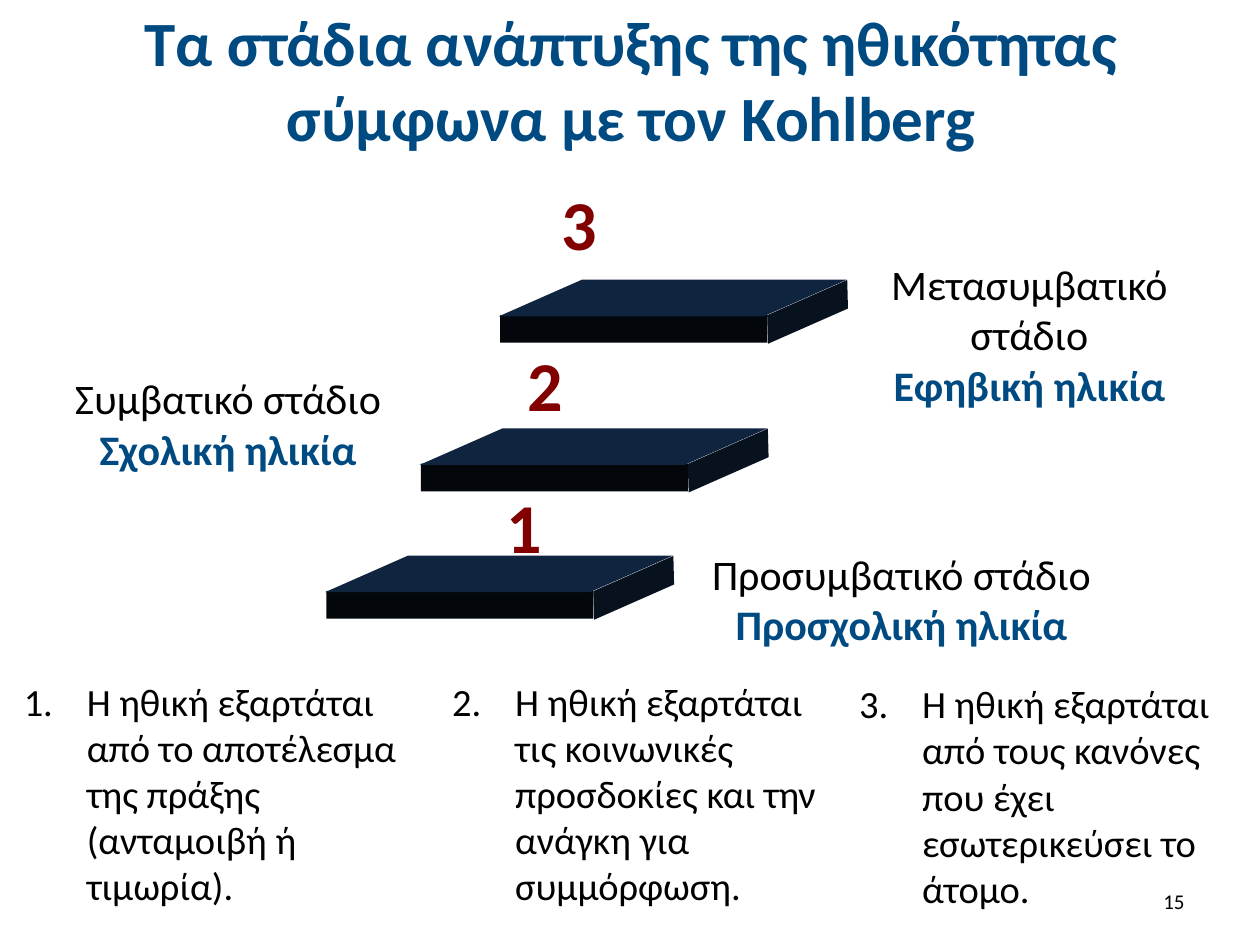
from dataclasses import dataclass

from lxml.etree import SubElement
from pptx import Presentation
from pptx.dml.color import RGBColor
from pptx.enum.shapes import MSO_SHAPE
from pptx.enum.text import MSO_ANCHOR, MSO_AUTO_SIZE, PP_ALIGN
from pptx.oxml.ns import qn
from pptx.util import Inches, Pt


@dataclass(frozen=True)
class Theme:
    font: str = "Calibri"
    text: str = "000000"
    accent: str = "004A82"
    number: str = "820000"
    slab_front: str = "03070C"
    slab_top: str = "0F243E"
    slab_side: str = "08121F"
    title_size: int = 36
    number_size: int = 40
    stage_size: int = 24
    body_size: int = 22
    footer_size: int = 12


THEME = Theme()

# Slab faces: preset, offset from the slab corner, size, rotation, adjustment, colour
SLAB_FACES = [
    (MSO_SHAPE.RECTANGLE, (0.01, 0.28), (2.12, 0.22), 0, None, THEME.slab_front),
    (MSO_SHAPE.PARALLELOGRAM, (0, 0), (2.76, 0.29), 0, 2.27, THEME.slab_top),
    (MSO_SHAPE.PARALLELOGRAM, (2.06, 0.15), (0.78, 0.21), -23.8, 0.41, THEME.slab_side),
]

# Stages from the lowest step up; boxes are left, top, width, height
STAGES = [
    {
        "slab": (2.58, 4.41), "number": (3.92, 3.79),
        "name": "Προσυμβατικό στάδιο", "age": "Προσχολική ηλικία",
        "label": (5.44, 4.3, 3.43, 0.91),
        "rule": "Η ηθική εξαρτάται από το αποτέλεσμα της πράξης (ανταμοιβή ή τιμωρία).",
        "rule_box": (0.09, 5.33, 3.28, 1.95),
    },
    {
        "slab": (3.33, 3.4), "number": (4.09, 2.66),
        "name": "Συμβατικό στάδιο", "age": "Σχολική ηλικία",
        "label": (0.33, 2.91, 2.96, 0.91),
        "rule": "Η ηθική εξαρτάται τις κοινωνικές προσδοκίες και την ανάγκη για συμμόρφωση.",
        "rule_box": (3.49, 5.33, 3.31, 1.95),
    },
    {
        "slab": (3.96, 2.22), "number": (4.36, 1.38),
        "name": "Μετασυμβατικό στάδιο", "age": "Εφηβική ηλικία",
        "label": (6.69, 2, 2.96, 1.31),
        "rule": "Η ηθική εξαρτάται από τους κανόνες που έχει εσωτερικεύσει το άτομο.",
        "rule_box": (6.72, 5.35, 3.01, 1.95),
    },
]


def write_paragraph(paragraph, text, size, color=THEME.text, bold=False, align=PP_ALIGN.LEFT):
    paragraph.alignment = align
    run = paragraph.add_run()
    run.text = text
    font_format = {"name": THEME.font, "size": Pt(size), "bold": bold}
    for attribute, value in font_format.items():
        setattr(run.font, attribute, value)
    run.font.color.rgb = RGBColor.from_string(color)


def add_text_frame(slide, box, anchor=MSO_ANCHOR.TOP):
    frame = slide.shapes.add_textbox(*map(Inches, box)).text_frame
    frame.word_wrap = True
    frame.vertical_anchor = anchor
    return frame


def set_title(slide, text):
    title = slide.shapes.title
    position = {"left": 0.51, "top": 0.13, "width": 9, "height": 0.99}
    for attribute, value in position.items():
        setattr(title, attribute, Inches(value))
    frame = title.text_frame
    frame.auto_size = MSO_AUTO_SIZE.NONE
    frame.vertical_anchor = MSO_ANCHOR.MIDDLE
    write_paragraph(frame.paragraphs[0], text, THEME.title_size, THEME.accent, True, PP_ALIGN.CENTER)


def add_slab(slide, left, top):
    group = slide.shapes.add_group_shape()
    for preset, (dx, dy), (width, height), rotation, adjustment, color in SLAB_FACES:
        face = group.shapes.add_shape(
            preset, Inches(left + dx), Inches(top + dy), Inches(width), Inches(height))
        face.rotation = rotation
        if adjustment is not None:
            face.adjustments[0] = adjustment
        face.shadow.inherit = False
        face.fill.solid()
        face.fill.fore_color.rgb = RGBColor.from_string(color)
        face.line.fill.background()


def add_number(slide, number, left, top):
    frame = add_text_frame(slide, (left, top, 0.39, 0.77))
    frame.word_wrap = False
    write_paragraph(frame.paragraphs[0], str(number), THEME.number_size, THEME.number, True)


def add_stage_label(slide, box, name, age):
    frame = add_text_frame(slide, box)
    write_paragraph(frame.paragraphs[0], name, THEME.stage_size, align=PP_ALIGN.CENTER)
    write_paragraph(frame.add_paragraph(), age, THEME.stage_size, THEME.accent, True, PP_ALIGN.CENTER)


def add_numbered_rule(slide, box, number, text):
    paragraph = add_text_frame(slide, box).paragraphs[0]
    write_paragraph(paragraph, text, THEME.body_size)
    properties = paragraph._p.get_or_add_pPr()
    properties.set("marL", str(Inches(0.5)))
    properties.set("indent", str(Inches(-0.5)))
    SubElement(properties, qn("a:buFont"), typeface="+mj-lt")
    SubElement(properties, qn("a:buAutoNum"), type="arabicPeriod", startAt=str(number))


def add_page_number(slide, number):
    frame = add_text_frame(slide, (7.17, 6.95, 2.33, 0.4), MSO_ANCHOR.MIDDLE)
    write_paragraph(frame.paragraphs[0], str(number), THEME.footer_size, align=PP_ALIGN.RIGHT)


def main():
    presentation = Presentation()
    presentation.slide_width, presentation.slide_height = Inches(10), Inches(7.5)
    slide = presentation.slides.add_slide(presentation.slide_layouts.get_by_name("Title Only"))

    # Title and page number
    set_title(slide, "Τα στάδια ανάπτυξης της ηθικότητας σύμφωνα με τον Kohlberg")
    add_page_number(slide, 15)

    # Staircase with one step, label and rule per stage
    for number, stage in enumerate(STAGES, start=1):
        add_slab(slide, *stage["slab"])
        add_number(slide, number, *stage["number"])
        add_stage_label(slide, stage["label"], stage["name"], stage["age"])
        add_numbered_rule(slide, stage["rule_box"], number, stage["rule"])

    presentation.save("out.pptx")


if __name__ == "__main__":
    main()
